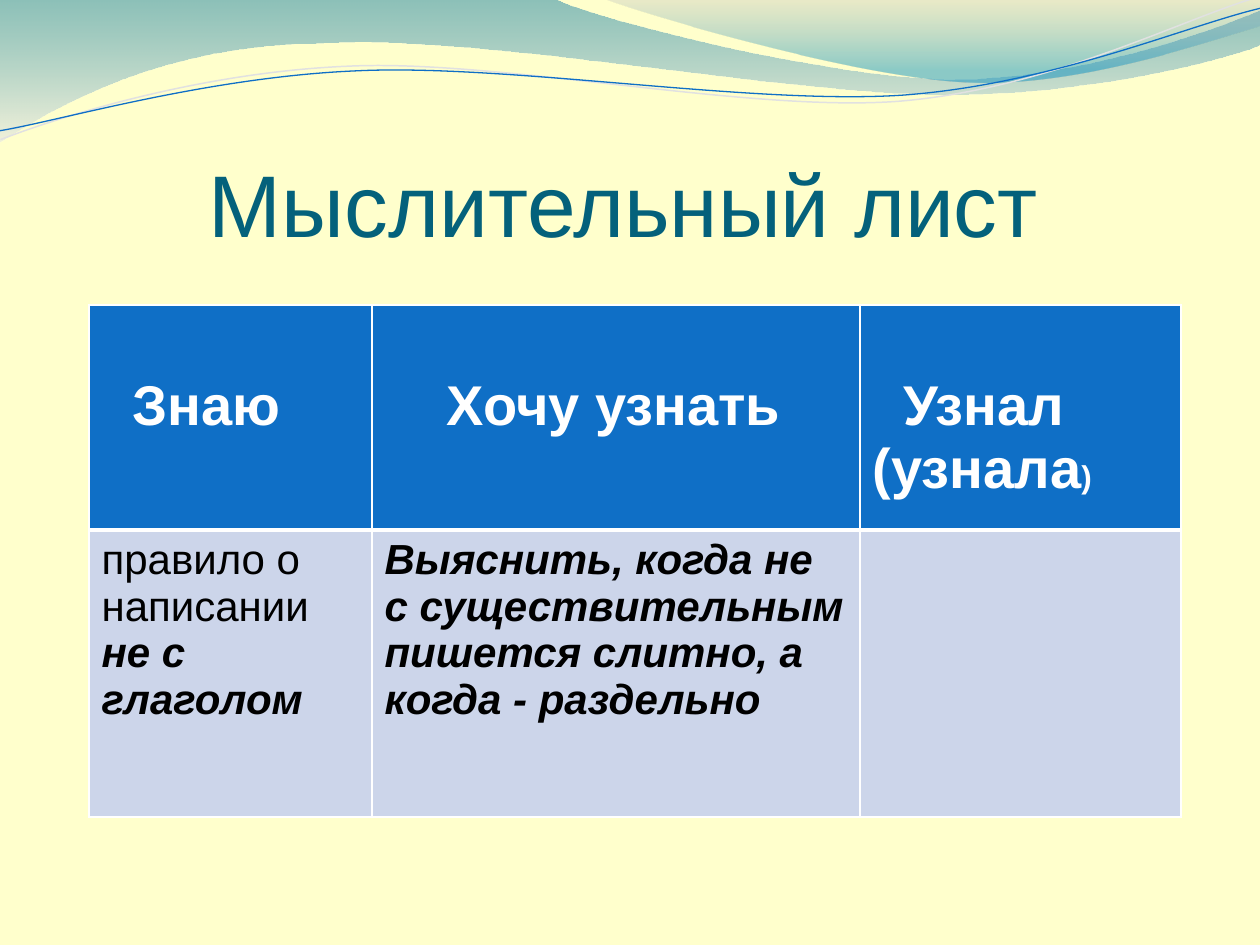
import pptx
import pptx.dml.color
import pptx.enum.text
import pptx.oxml
import pptx.oxml.ns
import pptx.util
from lxml import etree

EMU_PER_PX = 914400 / 126
FONT = "Arial"
COLORS = {
    "background": "FFFFCC", "title": "04617B", "header": "0F6FC6",
    "body": "CCD5EA", "white": "FFFFFF", "black": "000000",
    "deep": "0074A1", "mist": "E7E7E7", "grey": "BDBDBD",
    "teal": "008BBF", "pale": "E1E1E1",
}
LEFT_WAVE = [
    (0, -1), (554, -1), (600, 21, 837, 79, 955, 79), (1075, 79, 1207, 33, 1260, 11),
    (1261, 45), (1238, 55, 1096, 96, 940, 94), (784, 94, 481, 35, 324, 43),
    (163, 44, 58, 105, -1, 142),
]
RIGHT_WAVE = [
    (604, -1), (641, 14, 859, 78, 969, 82), (1079, 87, 1211, 40, 1260, 26), (1260, 0),
]
PALE_LINE = [
    (-2, 110), (58, 90, 200, 52, 350, 53), (499, 53, 745, 118, 896, 114),
    (1049, 109, 1184, 45, 1260, 27),
]
BLUE_LINE = [
    (-2, 101), (58, 94, 208, 57, 358, 58), (509, 58, 751, 111, 902, 108),
    (1052, 104, 1188, 52, 1263, 38),
]


def px(n):
    """Turn pixels into EMU."""
    return pptx.util.Emu(round(n * EMU_PER_PX))


def rgb(name):
    """Look up a named colour."""
    return pptx.dml.color.RGBColor.from_string(COLORS[name])


def add_path(slide, box, path, close):
    """Draw an outline of lines and cubic curves relative to the box."""
    points = [(box[0] + x, box[1] + y)
              for part in path for x, y in zip(part[::2], part[1::2])]
    fb = slide.shapes.build_freeform(*points[0], scale=EMU_PER_PX)
    fb.add_line_segments(points[1:], close=close)
    s = fb.convert_to_shape()
    s.shadow.inherit = False
    segments = s._element.iter(pptx.oxml.ns.qn("a:lnTo"))
    segments = iter(list(segments))
    for part in path[1:]:
        first = next(segments)
        if len(part) == 6:
            curve = etree.Element(pptx.oxml.ns.qn("a:cubicBezTo"))
            first.addprevious(curve)
            for segment in (first, next(segments), next(segments)):
                curve.append(segment[0])
                segment.getparent().remove(segment)
    return s


def add_waves(slide, box):
    """Place the two translucent waves and the two thin lines."""
    waves = (
        (LEFT_WAVE, (("deep", 0, 45), ("mist", 1, 55))),
        (RIGHT_WAVE, (("grey", 0, 30), ("teal", 0.8, 45))),
    )
    for path, stops in waves:
        s = add_path(slide, box, path, True)
        s.line.fill.background()
        s.fill.gradient()
        s.fill.gradient_angle = 270
        for stop, (color, position, _) in zip(s.fill.gradient_stops, stops):
            stop.color.rgb = rgb(color)
            stop.position = position
        colors = s._element.spPr.iter(pptx.oxml.ns.qn("a:srgbClr"))
        for clr, (_, _, opacity) in zip(colors, stops):
            etree.SubElement(clr, pptx.oxml.ns.qn("a:alpha"), val=str(opacity * 1000))
    for path, color, width in ((PALE_LINE, "pale", 0.85), (BLUE_LINE, "header", 0.75)):
        s = add_path(slide, box, path, False)
        s.rotation = 357.3
        s.fill.background()
        s.line.color.rgb = rgb(color)
        s.line.width = pptx.util.Pt(width)


def style_run(r, size, color, bold=False, italic=False):
    """Set the font of a run."""
    r.font.name = FONT
    r.font.size = pptx.util.Pt(size)
    r.font.color.rgb = rgb(color)
    r.font.bold = bold
    r.font.italic = italic


def add_title(slide, box):
    """Place the title at the bottom of the box."""
    tf = slide.shapes.add_textbox(*map(px, box)).text_frame
    tf.word_wrap = True
    tf.vertical_anchor = pptx.enum.text.MSO_ANCHOR.BOTTOM
    tf.margin_left, tf.margin_top = px(146), px(6)
    tf.margin_right = tf.margin_bottom = 0
    tf.text = "Мыслительный лист"
    style_run(tf.paragraphs[0].runs[0], 50, "title")


def set_borders(cell, bottom):
    """Give a cell white borders."""
    tcPr = cell._tc.get_or_add_tcPr()
    for side, width in (("L", 1), ("R", 1), ("T", 1), ("B", bottom)):
        tcPr.append(pptx.oxml.parse_xml(
            f'<a:ln{side} {pptx.oxml.ns.nsdecls("a")} w="{width * 12700}"><a:solidFill>'
            f'<a:srgbClr val="{COLORS["white"]}"/></a:solidFill></a:ln{side}>'))


def fill_cell(cell, fill, bottom, runs, indent=0):
    """Set the borders, fill and text of a cell."""
    set_borders(cell, bottom)
    cell.fill.solid()
    cell.fill.fore_color.rgb = rgb(fill)
    p = cell.text_frame.paragraphs[0]
    if indent:
        p._p.get_or_add_pPr().set("indent", str(px(indent)))
    for text, *style in runs:
        r = p.add_run()
        r.text = text
        style_run(r, *style)


def add_sheet(slide, box):
    """Place the three-column table in the box."""
    table = slide.shapes.add_table(2, 3, *map(px, box)).table
    for column, width in zip(table.columns, (283, 488, 321)):
        column.width = px(width)
    for row, height in zip(table.rows, (225, 287)):
        row.height = px(height)
    head = (32, "white", True)
    strong = (24, "black", True, True)
    headers = (
        ([("Знаю", *head)], 31),
        ([("Хочу узнать", *head)], 62),
        ([("Узнал (узнала", *head), (")", 18, "white", True)], 31),
    )
    bodies = (
        [("правило о написании ", 24, "black"), ("не с глаголом", *strong)],
        [("Выяснить, когда не с существительным пишется слитно, а когда - раздельно", *strong)],
        [],
    )
    for i, ((runs, indent), body) in enumerate(zip(headers, bodies)):
        cell = table.cell(0, i)
        cell.margin_top = px(70)
        fill_cell(cell, "header", 3, runs, indent)
        fill_cell(table.cell(1, i), "body", 1, body)


def main():
    """Build and save the slide."""
    prs = pptx.Presentation()
    prs.slide_width, prs.slide_height = px(1260), px(945)
    slide = prs.slides.add_slide(prs.slide_layouts[6])
    slide.background.fill.solid()
    slide.background.fill.fore_color.rgb = rgb("background")
    add_waves(slide, (0, 0, 1260, 142))
    add_title(slide, (63, 97, 1134, 158))
    add_sheet(slide, (89, 305, 1092, 512))
    prs.save("out.pptx")


if __name__ == "__main__":
    main()
